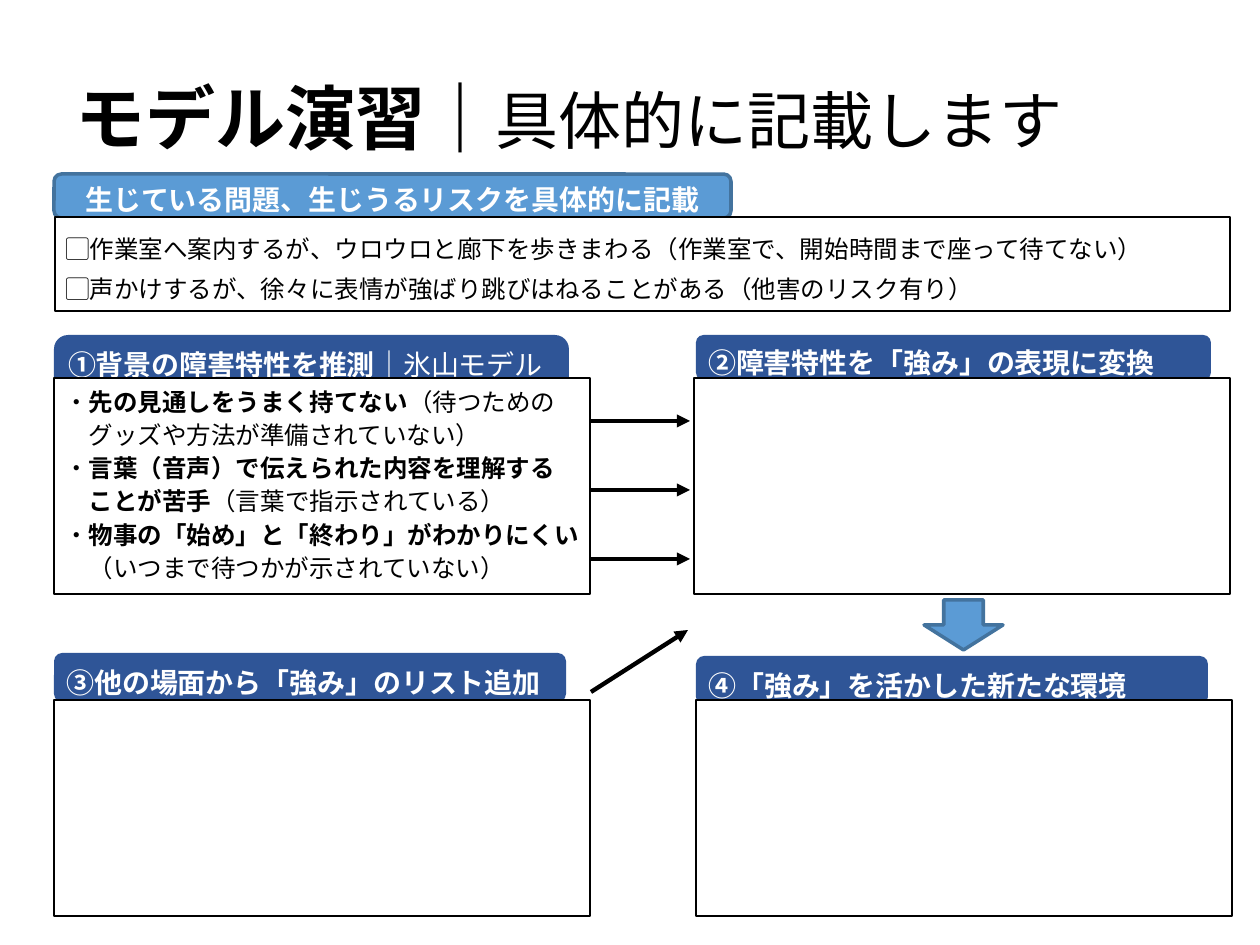
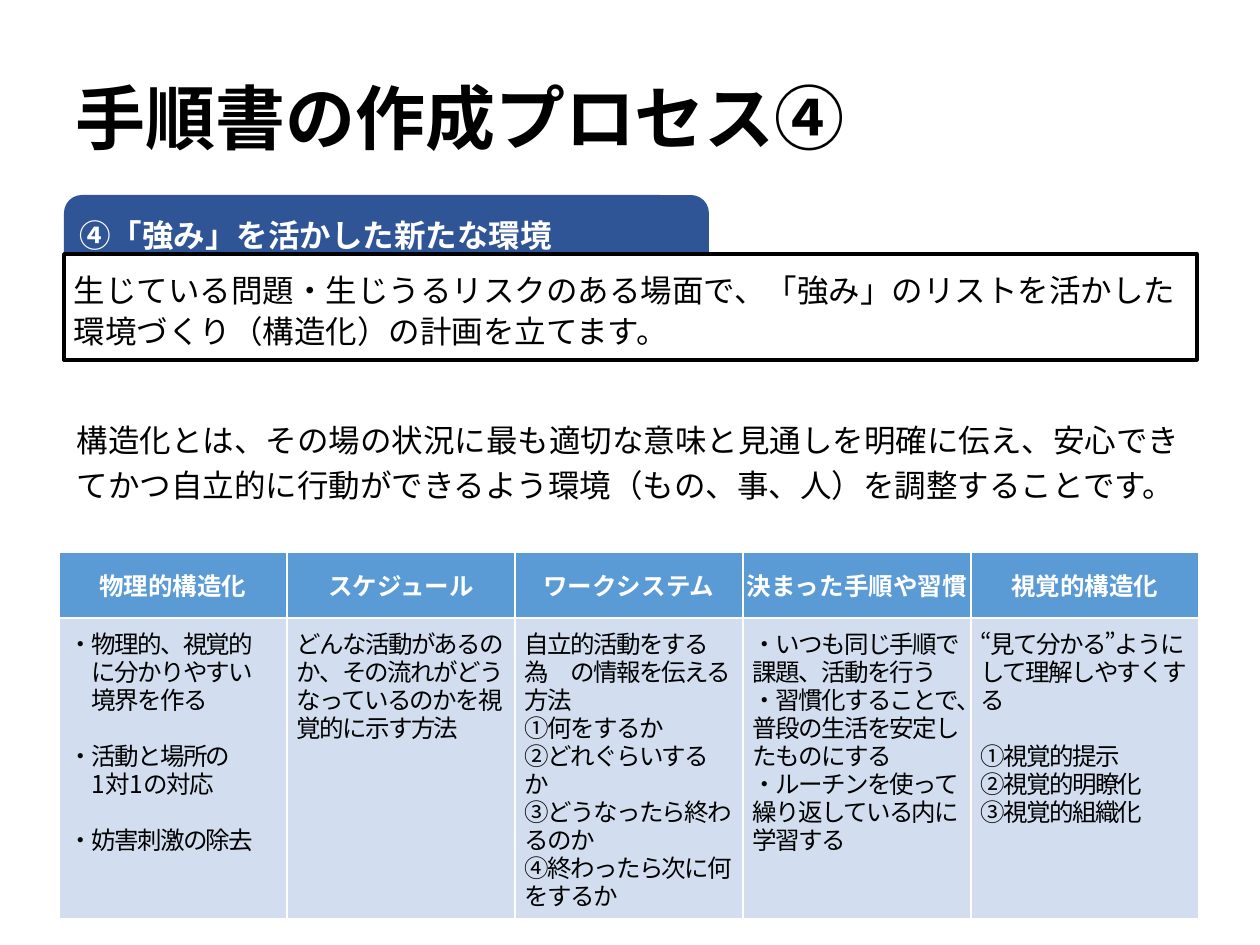
from lxml.etree import SubElement
from pptx import Presentation
from pptx.dml.color import RGBColor
from pptx.enum.lang import MSO_LANGUAGE_ID
from pptx.enum.shapes import MSO_CONNECTOR, MSO_SHAPE
from pptx.enum.text import MSO_ANCHOR, MSO_AUTO_SIZE, PP_ALIGN
from pptx.oxml.ns import qn
from pptx.util import Emu, Pt

SCALE = 914400 / 126  # EMU in one px
FONT = "Noto Sans CJK JP"
HEX = {"black": "000000", "white": "FFFFFF", "navy": "2F5597",
       "blue": "5B9BD5", "edge": "43739E", "pale": "D2DEEF"}

KINDS = [
    ("*物理的構造化*", ["・物理的、視覚的\vに分かりやすい\v境界を作る",
                 "・活動と場所の\v1対1の対応", "・妨害刺激の除去"]),
    ("*スケジュール*", ["どんな活動があるのか、その流れがどうなっているのかを視覚的に示す方法"]),
    ("*ワークシステム*", ["自立的活動をする為　の情報を伝える方法", "①何をするか",
                  "②どれぐらいする\vか", "③どうなったら終わるのか",
                  "④終わったら次に何をするか"]),
    ("*決まった手順や習慣*", ["・いつも同じ手順で課題、活動を行う",
                    "・習慣化することで、普段の生活を安定したものにする",
                    "・ルーチンを使って繰り返している内に学習する"]),
    ("*視覚的構造化*", ["“見て分かる”ようにして理解しやすくする",
                 "①視覚的提示", "②視覚的明瞭化", "③視覚的組織化"]),
]


def px(n):
    return Emu(round(n * SCALE))


def tint(name):
    return RGBColor.from_string(HEX[name])


# Text: *...* is bold, \v is a line break
def style(run, size, color, bold, track):
    font = run.font
    font.size, font.bold, font.name = Pt(size), bold, FONT
    font.color.rgb = tint(color)
    font.language_id = MSO_LANGUAGE_ID.JAPANESE
    props = run._r.get_or_add_rPr()
    SubElement(props, qn("a:ea")).set("typeface", FONT)
    if track:
        props.set("spc", str(track * 100))


def write(frame, lines, size, color="black", lead=None, align=PP_ALIGN.LEFT,
          hang=0, track=0):
    frame.word_wrap = True
    for i, line in enumerate(lines):
        para = frame.add_paragraph() if i else frame.paragraphs[0]
        para.alignment = align
        if lead:
            para.line_spacing = Pt(lead)
        if hang:
            props = para._p.get_or_add_pPr()
            props.set("marL", str(Pt(hang)))
            props.set("indent", str(-Pt(hang)))
        for row, text in enumerate(line.split("\v")):
            if row:
                para.add_line_break()
            for n, part in enumerate(text.split("*")):
                if part:
                    run = para.add_run()
                    run.text = part
                    style(run, size, color, n % 2 == 1, track)


def inset(item, left, top, right, bottom):
    item.margin_left, item.margin_top = px(left), px(top)
    item.margin_right, item.margin_bottom = px(right), px(bottom)


# Shapes
def shape(slide, kind, rect, fill, edge=None, width=1.5):
    item = slide.shapes.add_shape(kind, *map(px, rect))
    item.shadow.inherit = False
    item.fill.solid()
    item.fill.fore_color.rgb = tint(fill)
    if edge:
        item.line.color.rgb = tint(edge)
        item.line.width = Pt(width)
    else:
        item.line.fill.background()
    return item


def tab(slide, rect, text, top, size=16):
    frame = shape(slide, MSO_SHAPE.ROUNDED_RECTANGLE, rect, "navy").text_frame
    frame.vertical_anchor = MSO_ANCHOR.TOP
    inset(frame, 10, top, 10, 0)
    write(frame, [text], size, "white", 23)


def box(slide, rect, lines=(), size=14, lead=23, top=6, width=1.5, hang=0):
    frame = shape(slide, MSO_SHAPE.RECTANGLE, rect, "white", "black", width).text_frame
    frame.vertical_anchor = MSO_ANCHOR.TOP
    inset(frame, 10, top, 10, 6)
    write(frame, lines, size, lead=lead, hang=hang)


def arrow(slide, *ends):
    item = slide.shapes.add_connector(MSO_CONNECTOR.STRAIGHT, *map(px, ends))
    item.line.color.rgb = tint("black")
    item.line.width = Pt(2.5)
    SubElement(item.line._get_or_add_ln(), qn("a:tailEnd")).set("type", "triangle")
    SubElement(item._element.spPr, qn("a:effectLst"))


# Placeholders
def place(item, rect):
    item.left, item.top, item.width, item.height = map(px, rect)
    item.text_frame.auto_size = MSO_AUTO_SIZE.NONE
    return item.text_frame


def title(slide, text):
    frame = place(slide.shapes.title, (63, 38, 1134, 157))
    frame.vertical_anchor = MSO_ANCHOR.MIDDLE
    write(frame, [text], 40)
    for run in frame.paragraphs[0].runs:
        if not run.font.bold:
            run.font.size = Pt(36)


def body(slide, text):
    frame = place(slide.placeholders[1], (64, 407, 1134, 110))
    write(frame, [text], 18, lead=26)
    para = frame.paragraphs[0]
    para.space_before = Pt(4)
    props = para._p.get_or_add_pPr()
    props.set("marL", "0")
    props.set("indent", "0")
    SubElement(props, qn("a:buNone"))


# Table
def paint(cell, fill):
    cell.fill.solid()
    cell.fill.fore_color.rgb = tint(fill)


def grid(slide):
    table = slide.shapes.add_table(2, len(KINDS), px(59), px(552),
                                   px(1140), px(318)).table
    table.horz_banding = False
    table.rows[0].height, table.rows[1].height = px(66), px(252)
    for col, (head, lines) in enumerate(KINDS):
        top, low = table.cell(0, col), table.cell(1, col)
        paint(top, "blue")
        top.vertical_anchor = MSO_ANCHOR.MIDDLE
        inset(top, 0, 6, 0, 6)
        write(top.text_frame, [head], 14, "white", align=PP_ALIGN.CENTER)
        paint(low, "pale")
        inset(low, 10, 15, 10, 6)
        write(low.text_frame, lines, 14, lead=16, track=-1,
              hang=13 if col == 0 else 0)
    # One line of space between groups
    first, last = table.cell(1, 0), table.cell(1, len(KINDS) - 1)
    for para in first.text_frame.paragraphs[1:]:
        para.space_before = Pt(16)
    last.text_frame.paragraphs[1].space_before = Pt(16)


def model(deck):
    slide = deck.slides.add_slide(deck.slide_layouts[5])
    title(slide, "*モデル演習｜*具体的に記載します")

    # Problem and risk
    frame = shape(slide, MSO_SHAPE.ROUNDED_RECTANGLE, (54, 174, 677, 44),
                  "blue", "edge", 2).text_frame
    frame.vertical_anchor = MSO_ANCHOR.MIDDLE
    inset(frame, 13, 6, 13, 0)
    write(frame, ["*生じている問題、生じうるリスクを具体的に記載*"], 16, "white",
          align=PP_ALIGN.CENTER)
    box(slide, (55, 217, 1175, 94), [
        "▢作業室へ案内するが、ウロウロと廊下を歩きまわる（作業室で、開始時間まで座って待てない）",
        "▢声かけするが、徐々に表情が強ばり跳びはねることがある（他害のリスク有り）"])

    # Four steps
    traits = ["・*先の見通しをうまく持てない*（待つための\vグッズや方法が準備されていない）",
              "・*言葉（音声）で伝えられた内容を理解する*\v*ことが苦手*（言葉で指示されている）",
              "・*物事の「始め」と「終わり」がわかりにくい*\v（いつまで待つかが示されていない）"]
    steps = [
        ((54, 335, 515, 84), "*①背景の障害特性を推測*｜氷山モデル", 2, (54, 378), traits),
        ((696, 335, 515, 45), "*②障害特性を「強み」の表現に変換*", 2, (694, 378), []),
        ((54, 653, 512, 49), "*③他の場面から「強み」のリスト追加*", 4, (54, 700), []),
        ((696, 656, 512, 49), "*④「強み」を活かした新たな環境*", 4, (696, 700), []),
    ]
    for rect, text, top, spot, lines in steps:
        tab(slide, rect, text, top)
        box(slide, (*spot, 536, 216), lines, lead=19, top=5, hang=14)

    # Flow
    for n in range(3):
        y = 421 + 69 * n
        arrow(slide, 591, y, 690, y)
    arrow(slide, 591, 692, 688, 630)
    shape(slide, MSO_SHAPE.DOWN_ARROW, (924, 600, 79, 50), "blue", "edge", 2)


def process(deck):
    slide = deck.slides.add_slide(deck.slide_layouts[1])
    title(slide, "*手順書の作成プロセス④*")
    tab(slide, (64, 195, 645, 108), "*④「強み」を活かした新たな環境*", 13, 18)
    box(slide, (64, 254, 1133, 106),
        ["生じている問題・生じうるリスクのある場面で、「強み」のリストを活かした"
         "環境づくり（構造化）の計画を立てます。"], 18, top=15, width=2)
    body(slide, "構造化とは、その場の状況に最も適切な意味と見通しを明確に伝え、安心でき"
                "てかつ自立的に行動ができるよう環境（もの、事、人）を調整することです。")
    grid(slide)


def main():
    deck = Presentation()
    deck.slide_width, deck.slide_height = px(1260), px(945)
    model(deck)
    process(deck)
    deck.save("out.pptx")


if __name__ == "__main__":
    main()
